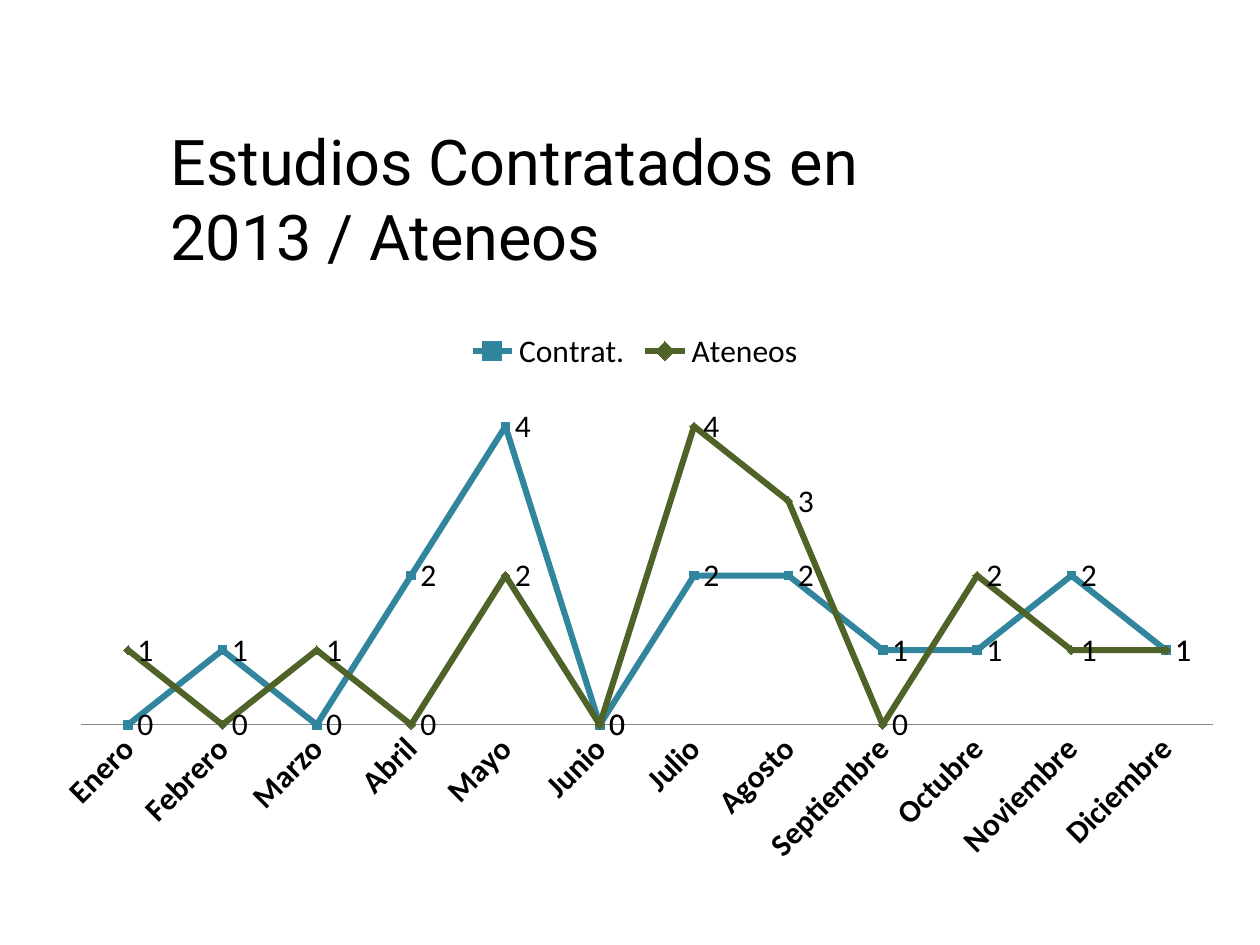
from lxml import etree
from pptx import Presentation
from pptx.chart.data import CategoryChartData
from pptx.dml.color import RGBColor
from pptx.enum import chart as ch, text as tx
from pptx.util import Cm, Pt

BLACK = RGBColor(0, 0, 0)
GRAY = RGBColor(0x86, 0x86, 0x86)
TEAL = RGBColor(0x31, 0x85, 0x9C)
GREEN = RGBColor(0x4F, 0x62, 0x28)

TITLE = "Estudios Contratados en 2013 / Ateneos"
MONTHS = ["Enero", "Febrero", "Marzo", "Abril", "Mayo", "Junio", "Julio",
          "Agosto", "Septiembre", "Octubre", "Noviembre", "Diciembre"]
SERIES = [
    ("Contrat.", [0, 1, 0, 2, 4, 0, 2, 2, 1, 1, 2, 1], TEAL,
     ch.XL_MARKER_STYLE.SQUARE),
    ("Ateneos", [1, 0, 1, 0, 2, 0, 4, 3, 0, 2, 1, 1], GREEN,
     ch.XL_MARKER_STYLE.DIAMOND),
]
PLOT = {"x": 0.04, "y": 0.13, "w": 0.94, "h": 0.6}
BODY = {"name": "Calibri", "size": Pt(18)}
HEAD = {"name": "Roboto", "size": Pt(36), "bold": False}


def style(font, form):
    for key, val in form.items():
        setattr(font, key, val)
    font.color.rgb = BLACK


def place(plot, box):
    """Fix the inner plot area as fractions of the chart."""
    area = plot.find("{*}plotArea")
    for old in area.findall("{*}layout"):
        area.remove(old)
    space = etree.QName(area).namespace

    def add(up, tag, val=None):
        node = etree.SubElement(up, f"{{{space}}}{tag}")
        if val is not None:
            node.set("val", str(val))
        return node

    outer = add(area, "layout")
    area.insert(0, outer)
    inner = add(outer, "manualLayout")
    add(inner, "layoutTarget", "inner")
    for key in "xy":
        add(inner, key + "Mode", "edge")
    for key, val in box.items():
        add(inner, key, val)


def add_title(slide):
    head = slide.shapes.title
    head.left, head.top, head.width, head.height = (
        Cm(3.18), Cm(2.34), Cm(17.22), Cm(1.8))
    frame = head.text_frame
    form = {"text": TITLE, "word_wrap": True,
            "auto_size": tx.MSO_AUTO_SIZE.NONE,
            "vertical_anchor": tx.MSO_ANCHOR.TOP}
    for key, val in form.items():
        setattr(frame, key, val)
    para = frame.paragraphs[0]
    para.alignment = tx.PP_ALIGN.LEFT
    style(para.runs[0].font, HEAD)


def add_chart(slide):
    data = CategoryChartData()
    data.categories = MONTHS
    for name, vals, *_ in SERIES:
        data.add_series(name, vals)
    chart = slide.shapes.add_chart(
        ch.XL_CHART_TYPE.LINE_MARKERS, Cm(0.66), Cm(6.38), Cm(24.28),
        Cm(11.28), data).chart
    style(chart.font, BODY)
    chart.has_title = False
    chart.has_legend = True
    chart.legend.position = ch.XL_LEGEND_POSITION.TOP
    chart.legend.include_in_layout = False
    style(chart.legend.font, BODY)

    axis = chart.value_axis
    form = {"visible": False, "has_major_gridlines": False,
            "minimum_scale": 0, "maximum_scale": 4.5}
    for key, val in form.items():
        setattr(axis, key, val)
    months = chart.category_axis
    months.major_tick_mark = ch.XL_TICK_MARK.NONE
    months.format.line.color.rgb = GRAY
    months.format.line.width = Pt(0.75)
    style(months.tick_labels.font, {**BODY, "bold": True})
    months._element.find("{*}txPr/{*}bodyPr").set("rot", "-2700000")

    chart.plots[0].vary_by_categories = False
    for line, (_, _, color, mark) in zip(chart.plots[0].series, SERIES):
        line.smooth = False
        line.format.line.color.rgb = color
        line.format.line.width = Pt(3.5)
        line.marker.style, line.marker.size = mark, 5
        line.marker.format.fill.solid()
        line.marker.format.fill.fore_color.rgb = color
        line.marker.format.line.color.rgb = color
        tags = line.data_labels
        tags.show_value = True
        tags.position = ch.XL_LABEL_POSITION.RIGHT
        style(tags.font, BODY)
    place(chart._chartSpace.find("{*}chart"), PLOT)


def main():
    deck = Presentation()
    deck.slide_width, deck.slide_height = Cm(25.4), Cm(19.05)
    slide = deck.slides.add_slide(deck.slide_layouts[5])
    add_chart(slide)
    add_title(slide)
    deck.save("out.pptx")


if __name__ == "__main__":
    main()
